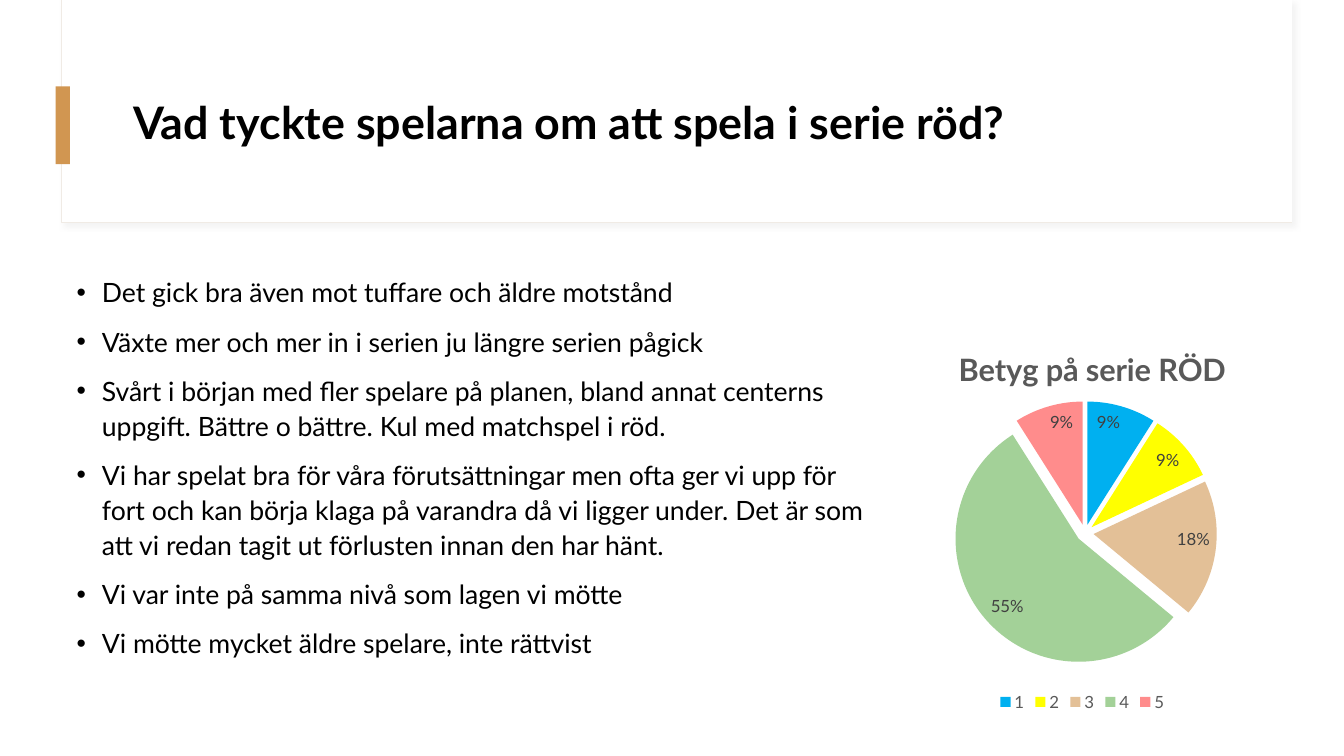
from dataclasses import dataclass

from lxml import etree
from pptx import Presentation
from pptx.chart.data import CategoryChartData
from pptx.dml.color import RGBColor
from pptx.enum.chart import XL_CHART_TYPE, XL_LABEL_POSITION, XL_LEGEND_POSITION
from pptx.enum.shapes import MSO_SHAPE
from pptx.enum.text import MSO_ANCHOR, MSO_AUTO_SIZE, PP_ALIGN
from pptx.oxml import parse_xml
from pptx.oxml.ns import nsdecls, qn
from pptx.util import Cm, Pt

RECT = MSO_SHAPE.RECTANGLE
PIE = XL_CHART_TYPE.PIE
INSIDE_END = XL_LABEL_POSITION.INSIDE_END
BOTTOM = XL_LEGEND_POSITION.BOTTOM
MIDDLE = MSO_ANCHOR.MIDDLE
NO_FIT = MSO_AUTO_SIZE.NONE
LEFT = PP_ALIGN.LEFT

TITLE = "Vad tyckte spelarna om att spela i serie röd?"
COMMENTS = [
    "Det gick bra även mot tuffare och äldre motstånd",
    "Växte mer och mer in i serien ju längre serien pågick",
    "Svårt i början med fler spelare på planen, bland annat centerns uppgift. "
    "Bättre o bättre. Kul med matchspel i röd.",
    "Vi har spelat bra för våra förutsättningar men ofta ger vi upp för fort och kan "
    "börja klaga på varandra då vi ligger under. Det är som att vi redan tagit ut "
    "förlusten innan den har hänt.",
    "Vi var inte på samma nivå som lagen vi mötte",
    "Vi mötte mycket äldre spelare, inte rättvist",
]
CHART_TITLE = "Betyg på serie RÖD"
RATINGS = [
    ("1", 9, "00B0F0", 100),
    ("2", 9, "FFFF00", 100),
    ("3", 18, "E3C097", 100),
    ("4", 55, "A3D198", 100),
    ("5", 9, "FF0000", 45),
]


@dataclass(frozen=True)
class Theme:
    font: str = "Lato"
    text: str = "000000"
    panel: str = "FFFFFF"
    border: str = "F0EBE5"
    shadow: str = "D9D9D9"
    accent: str = "D19651"
    chart_text: str = "595959"
    label: str = "404040"
    title_size: float = 32
    body_size: float = 19
    chart_title_size: float = 22
    chart_size: float = 12


THEME = Theme()
PANEL_BOX = (1.55, 0, 31.01, 5.61)
PANEL_FACE_BOX = (1.57, 0, 30.99, 5.59)
ACCENT_BOX = (1.4, 2.18, 0.36, 1.96)
TITLE_BOX = (3.1, 1.52, 28.24, 3.28)
BODY_BOX = (1.68, 6.76, 20.6, 10.26)
CHART_BOX = (20.19, 8.13, 14.17, 9.91)
BULLET_INDENT = Cm(0.64)


def lengths(box):
    return [Cm(v) for v in box]


def style(font, size, color, bold=False):
    font.name = THEME.font
    font.size = Pt(size)
    font.bold = bold
    font.color.rgb = RGBColor.from_string(color)


def add_rect(s, box, fill, border=None):
    sp = s.shapes.add_shape(RECT, *lengths(box))
    sp.shadow.inherit = False
    sp.fill.solid()
    sp.fill.fore_color.rgb = RGBColor.from_string(fill)
    if border:
        sp.line.color.rgb = RGBColor.from_string(border)
        sp.line.width = Pt(0.75)
    else:
        sp.line.fill.background()
    return sp


def add_soft_shadow(sp):
    effects = sp.element.spPr.find(qn("a:effectLst"))
    effects.append(parse_xml(
        f'<a:outerShdw {nsdecls("a")} blurRad="{Pt(4)}" dist="{Pt(3)}" dir="2700000">'
        f'<a:srgbClr val="{THEME.shadow}"><a:alpha val="30000"/></a:srgbClr></a:outerShdw>'))


def add_title(s):
    sp = s.shapes.title
    sp.left, sp.top, sp.width, sp.height = lengths(TITLE_BOX)
    sp.element.getparent().append(sp.element)
    tf = sp.text_frame
    tf.text = TITLE
    tf.auto_size = NO_FIT
    tf.vertical_anchor = MIDDLE
    p = tf.paragraphs[0]
    p.alignment = LEFT
    p.line_spacing = 0.9
    style(p.runs[0].font, THEME.title_size, THEME.text, True)


def add_comments(s):
    tf = s.shapes.add_textbox(*lengths(BODY_BOX)).text_frame
    tf.word_wrap = True
    tf.text = "\n".join(COMMENTS)
    for p in tf.paragraphs:
        p.line_spacing = 1.1
        p.space_before = Pt(10)
        style(p.runs[0].font, THEME.body_size, THEME.text)
        pPr = p._p.get_or_add_pPr()
        pPr.set("marL", str(BULLET_INDENT))
        pPr.set("indent", str(-BULLET_INDENT))
        etree.SubElement(pPr, qn("a:buFont")).set("typeface", "Arial")
        etree.SubElement(pPr, qn("a:buChar")).set("char", "•")


def layout_xml(**values):
    items = "".join(f'<c:{k} val="{v}"/>' for k, v in values.items())
    return parse_xml(f'<c:layout {nsdecls("c")}><c:manualLayout>{items}'
                     '</c:manualLayout></c:layout>')


def set_layout(parent, after, **values):
    for old in parent.findall(qn("c:layout")):
        parent.remove(old)
    layout = layout_xml(**values)
    if after is None:
        parent.insert(0, layout)
    else:
        after.addnext(layout)


def add_ratings_chart(s):
    data = CategoryChartData()
    data.categories = [r[0] for r in RATINGS]
    data.add_series("Betyg", [r[1] for r in RATINGS])
    chart = s.shapes.add_chart(PIE, *lengths(CHART_BOX), data).chart
    style(chart.font, THEME.chart_size, THEME.chart_text)

    chart.has_title = True
    title = chart.chart_title
    title.text_frame.text = CHART_TITLE
    style(title.text_frame.paragraphs[0].runs[0].font,
          THEME.chart_title_size, THEME.chart_text, True)
    title.include_in_layout = False
    title_xml = title._element
    set_layout(title_xml, title_xml.find(qn("c:tx")),
               xMode="edge", yMode="edge", x=0.27, y=0.05)

    chart.has_legend = True
    chart.legend.position = BOTTOM
    chart.legend.include_in_layout = False
    style(chart.legend.font, THEME.chart_size, THEME.chart_text)

    plot = chart.plots[0]
    plot.vary_by_categories = True
    plot.has_data_labels = True
    labels = plot.data_labels
    labels.show_value = False
    labels.show_percentage = True
    labels.number_format = "0%"
    labels.number_format_is_linked = False
    labels.position = INSIDE_END
    style(labels.font, THEME.chart_size, THEME.label)

    series = plot.series[0]
    for i, (_, _, color, opacity) in enumerate(RATINGS):
        fill = series.points[i].format.fill
        fill.solid()
        fill.fore_color.rgb = RGBColor.from_string(color)
        if opacity < 100:
            rgb = series.points[i].format._element.spPr.find(".//" + qn("a:srgbClr"))
            etree.SubElement(rgb, qn("a:alpha")).set("val", str(opacity * 1000))
    first_point = series._element.find(qn("c:dPt"))
    first_point.addprevious(parse_xml(f'<c:explosion {nsdecls("c")} val="7"/>'))

    plot_area = chart._chartSpace.find(".//" + qn("c:plotArea"))
    set_layout(plot_area, None, layoutTarget="inner", xMode="edge", yMode="edge",
               x=0.27, y=0.2, w=0.47, h=0.67)


def main():
    prs = Presentation()
    prs.slide_width, prs.slide_height = Cm(33.87), Cm(19.05)
    s = prs.slides.add_slide(prs.slide_layouts[5])
    add_soft_shadow(add_rect(s, PANEL_BOX, THEME.panel, THEME.border))
    add_rect(s, PANEL_FACE_BOX, THEME.panel)
    add_rect(s, ACCENT_BOX, THEME.accent)
    add_title(s)
    add_comments(s)
    add_ratings_chart(s)
    prs.save("out.pptx")


if __name__ == "__main__":
    main()
